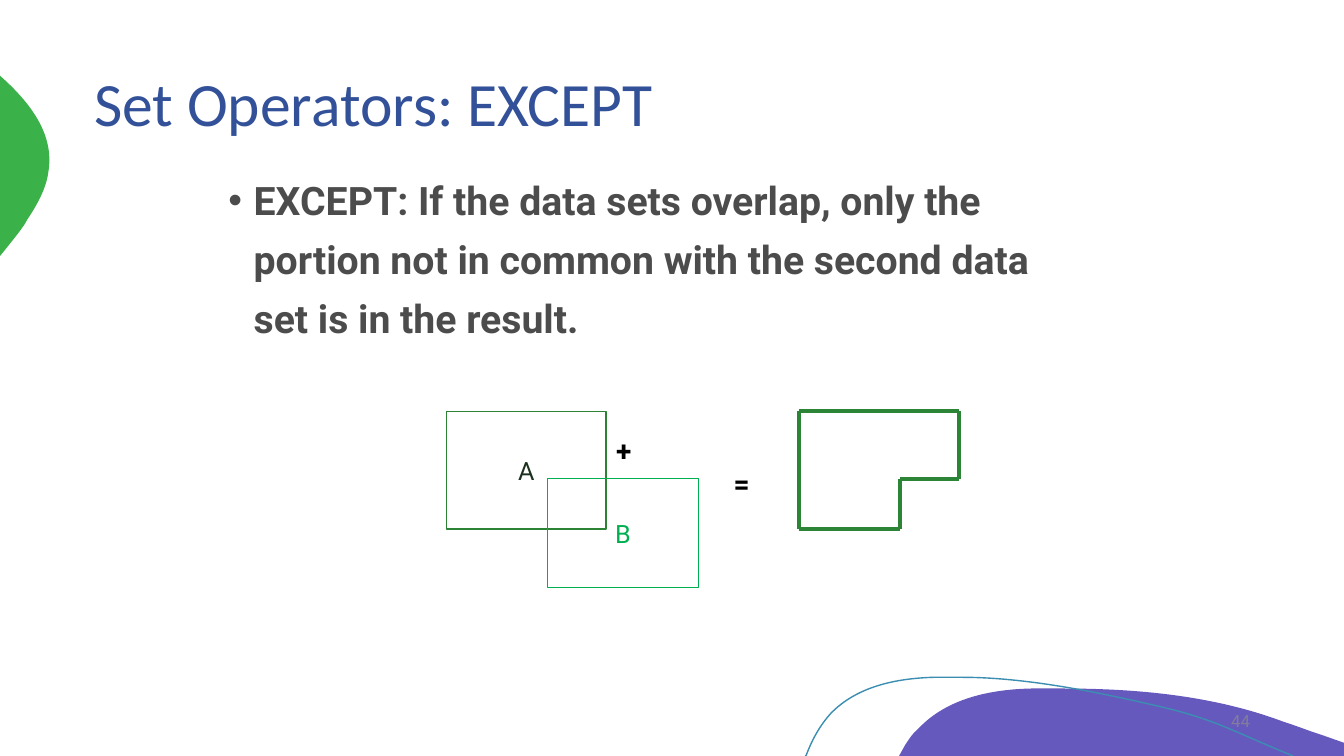
from lxml import etree
from pptx import Presentation
from pptx.dml.color import RGBColor
from pptx.enum.shapes import MSO_CONNECTOR, MSO_SHAPE
from pptx.enum.text import MSO_ANCHOR, MSO_AUTO_SIZE, PP_ALIGN
from pptx.oxml.ns import qn
from pptx.util import Pt

LINE = MSO_CONNECTOR.STRAIGHT
RECT = MSO_SHAPE.RECTANGLE
MIDDLE, TOP = MSO_ANCHOR.MIDDLE, MSO_ANCHOR.TOP
LEFT, CENTER, RIGHT = PP_ALIGN.LEFT, PP_ALIGN.CENTER, PP_ALIGN.RIGHT
NO_AUTOFIT = MSO_AUTO_SIZE.NONE

# Outlines in points: a pair is a straight step, six numbers are a Bézier curve.
PURPLE_WAVE = [
    (758.9, 491.8), (812.2, 491.8, 866.9, 496.8, 916.6, 515.5),
    (925.9, 518.4, 934.6, 522, 943.9, 524.9), (960, 530.6), (960, 540),
    (642.2, 540), (646.6, 532.1), (649.4, 527.8, 652.3, 523.4, 655.9, 520.6),
    (676.1, 499, 707, 492.5, 736.6, 491.8),
    (743.8, 491.8, 751, 491.8, 758.9, 491.8),
]
GREEN_BULGE = [
    (0, 54), (0.7, 54.7), (21.6, 73.4, 38.9, 95.8, 34.6, 122.4),
    (33.1, 134.6, 26.6, 146.2, 19.4, 157),
    (17.3, 161.3, 12.2, 167.8, 5.8, 175.7), (0, 182.9),
]
TEAL_CURVE = [
    (575.3, 540), (576, 539.3), (580.3, 527.8, 586.1, 517.7, 593.3, 509.8),
    (612, 490.3, 640.1, 484.6, 666.7, 483.8), (687.6, 483.8),
    (735.8, 483.8, 792, 496.1, 831.6, 505.4),
    (870.5, 514.8, 882.7, 523.4, 923.8, 540),
]
EXCEPT_CORNERS = [(571, 293.75), (685, 293.75), (685, 342),
                  (643, 342), (643, 378), (571, 378)]


def rgb(color):
    return RGBColor.from_string(color)


def place(sp, left, top, width, height):
    sp.left, sp.top = Pt(left), Pt(top)
    sp.width, sp.height = Pt(width), Pt(height)


def write(sp, text, size, color, font="Roboto", bold=False,
          align=LEFT, anchor=TOP):
    tf = sp.text_frame
    tf.word_wrap = True
    tf.auto_size = NO_AUTOFIT
    tf.vertical_anchor = anchor
    p = tf.paragraphs[0]
    p.text = text
    p.alignment = align
    p.font.name, p.font.size, p.font.bold = font, Pt(size), bold
    p.font.color.rgb = rgb(color)
    return p


def bend(sp, steps):
    """Replace the straight segments of curved steps by Bézier segments."""
    segments = list(sp._element.iter(qn("a:lnTo")))
    for segment, step in zip(segments, steps[1:]):
        if len(step) == 2:
            continue
        curve = etree.Element(qn("a:cubicBezTo"))
        for x, y in zip(step[::2], step[1::2]):
            pt = etree.SubElement(curve, qn("a:pt"))
            pt.set("x", str(Pt(x) - sp.left))
            pt.set("y", str(Pt(y) - sp.top))
        segment.getparent().replace(segment, curve)


def add_outline(s, steps, fill=None, line=None):
    """Draw a closed filled shape, or an open line if there is no fill."""
    ends = [(Pt(step[-2]), Pt(step[-1])) for step in steps]
    builder = s.shapes.build_freeform(*ends[0])
    builder.add_line_segments(ends[1:], close=fill is not None)
    sp = builder.convert_to_shape()
    bend(sp, steps)
    sp.shadow.inherit = False
    if fill:
        sp.fill.solid()
        sp.fill.fore_color.rgb = rgb(fill)
        sp.line.fill.background()
    else:
        sp.fill.background()
        sp.line.color.rgb = rgb(line)
        sp.line.width = Pt(1)


def add_set(parent, name, box, line, color):
    sp = parent.shapes.add_shape(RECT, *map(Pt, box))
    sp.shadow.inherit = False
    sp.fill.background()
    sp.line.color.rgb = rgb(line)
    sp.line.width = Pt(1)
    write(sp, name, 18, color, align=CENTER, anchor=MIDDLE)


def add_label(parent, text, box, size, color, **style):
    sp = parent.shapes.add_textbox(*map(Pt, box))
    write(sp, text, size, color, **style)


def add_edge(parent, start, end, color):
    edge = parent.shapes.add_connector(LINE, *map(Pt, start + end))
    edge.line.color.rgb = rgb(color)
    edge.line.width = Pt(2.75)
    etree.SubElement(edge._element.spPr, qn("a:effectLst"))


def fill_placeholders(s):
    """Write the title and the list, in front of the background shapes."""
    title, body = s.placeholders
    for sp in (title, body):
        s.shapes._spTree.append(sp._element)

    place(title, 60, 16, 840, 120)
    p = write(title, "Set Operators: EXCEPT", 44, "335199",
              font="Calibri", anchor=MIDDLE)
    p.line_spacing = 0.9

    place(body, 156, 114, 618, 360)
    p = write(body, "EXCEPT: If the data sets overlap, only the portion not in "
              "common with the second data set is in the result.",
              28, "4C4C4C", bold=True)
    p.line_spacing = 1.25
    p.space_before = Pt(10)
    pPr = p._p.get_or_add_pPr()
    pPr.set("marL", str(Pt(18)))
    pPr.set("indent", str(-Pt(18)))


def add_diagram(s):
    group = s.shapes.add_group_shape()
    add_set(group, "A", (319, 294, 114, 84), "2C8336", "1B311E")
    add_set(group, "B", (391, 342, 108, 77.75), "00B050", "00B050")
    for sign, left, top in (("+", 433, 306), ("=", 517, 330)):
        add_label(group, sign, (left, top, 48, 31.5), 20, "000000", bold=True)
    next_corners = EXCEPT_CORNERS[1:] + EXCEPT_CORNERS[:1]
    for start, end in zip(EXCEPT_CORNERS, next_corners):
        add_edge(group, start, end, "2C8537")


def main():
    prs = Presentation()
    prs.slide_width, prs.slide_height = Pt(960), Pt(540)
    s = prs.slides.add_slide(prs.slide_layouts[1])

    add_outline(s, PURPLE_WAVE, fill="6659BD")
    add_outline(s, GREEN_BULGE, fill="3BB149")
    add_outline(s, TEAL_CURVE, line="3B8EB1")
    fill_placeholders(s)
    add_label(s, "44", (780, 500.5, 120, 28.75), 12, "817D9B",
              align=RIGHT, anchor=MIDDLE)
    add_diagram(s)

    prs.save("out.pptx")


if __name__ == "__main__":
    main()
